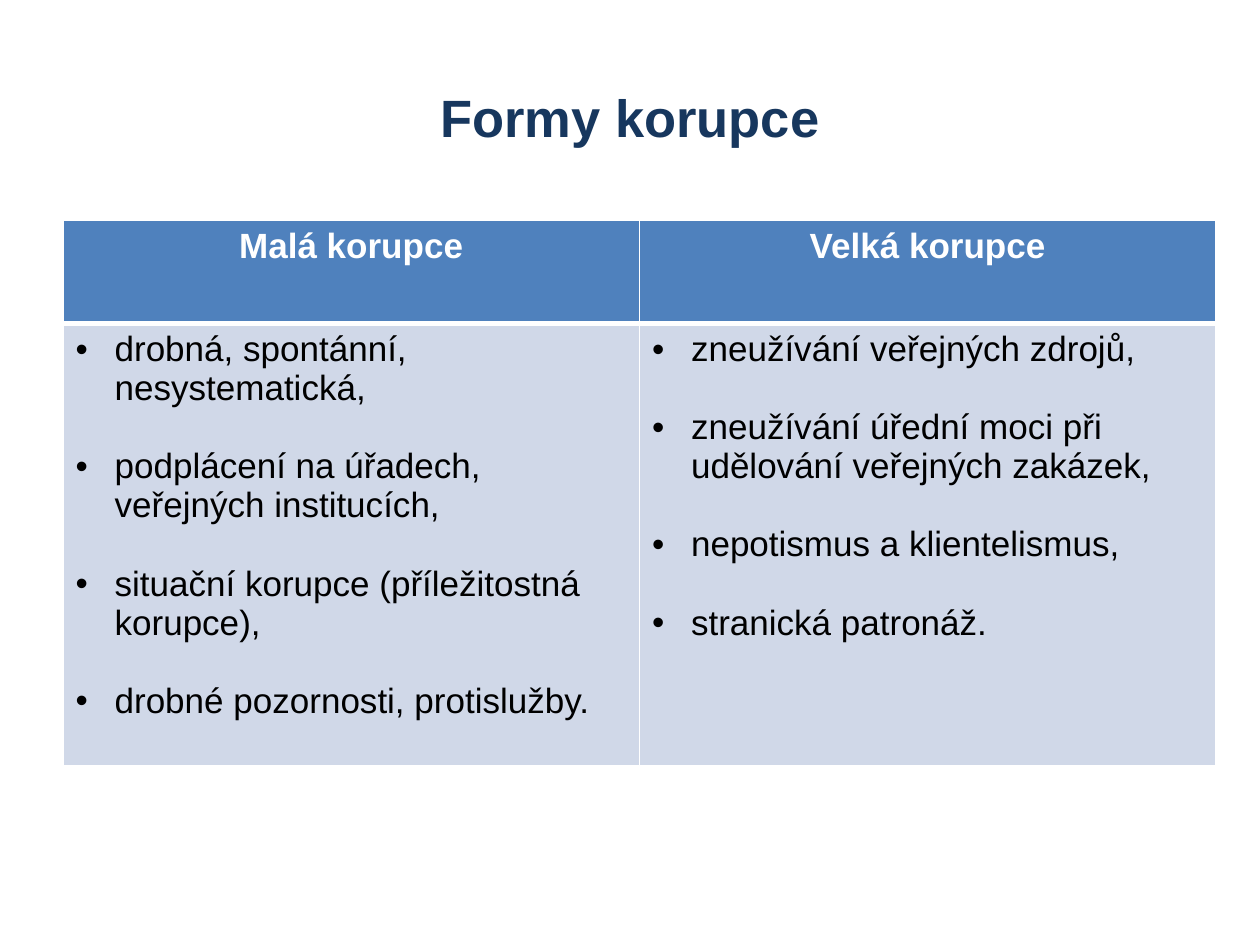
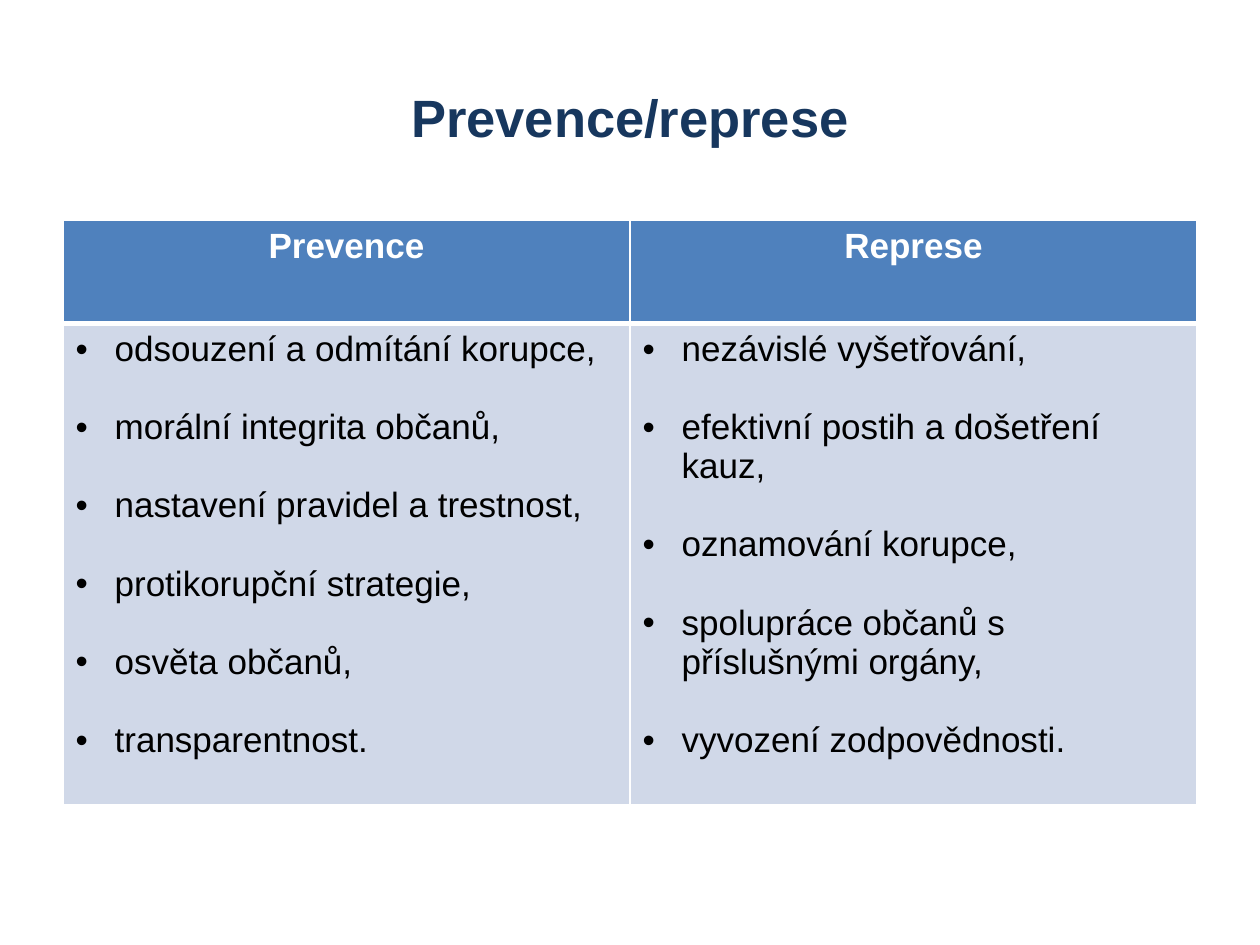
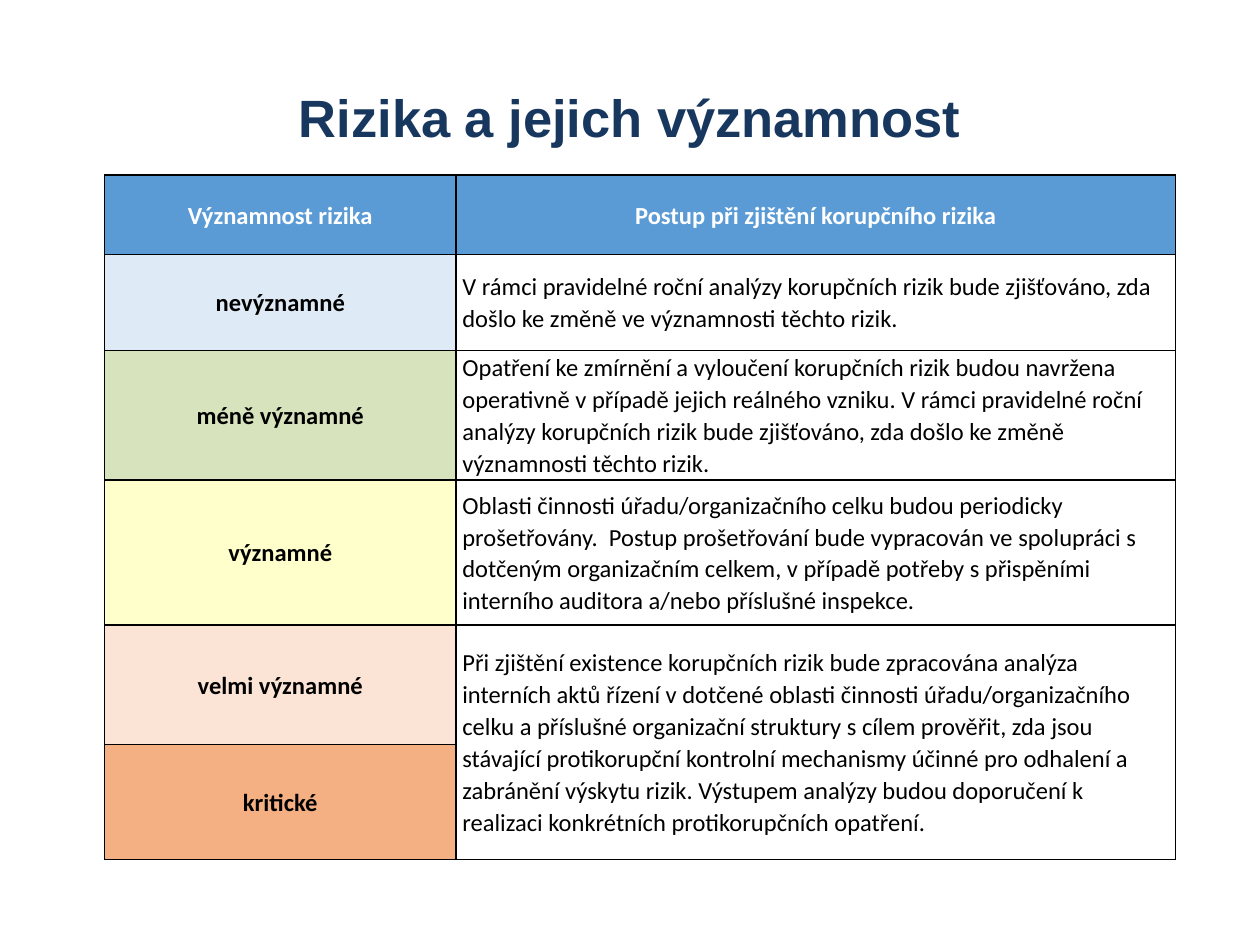
"""Build three slides on corruption: two comparison tables and a risk table."""
from lxml import etree
from pptx import Presentation
from pptx import util as u
from pptx.dml.color import RGBColor
from pptx.enum import text as t
from pptx.oxml import ns

COLOURS = {
    "title": "17375E", "header": "4F81BD", "body": "D0D8E8",
    "risk header": "5B9BD5", "white": "FFFFFF", "black": "000000",
    "nevýznamné": "DEEAF6", "méně významné": "D6E3BC",
    "významné": "FFFFCC", "velmi významné": "FBE4D5", "kritické": "F4B083",
}
COMPARISONS = [
    {
        "title": "Formy korupce", "width": 9.15, "heights": [0.82, 3.51],
        "columns": {
            "Malá korupce": [
                "drobná, spontánní, nesystematická,",
                "podplácení na úřadech, veřejných institucích,",
                "situační korupce (příležitostná korupce),",
                "drobné pozornosti, protislužby.",
            ],
            "Velká korupce": [
                "zneužívání veřejných zdrojů,",
                "zneužívání úřední moci při udělování veřejných zakázek,",
                "nepotismus a klientelismus,",
                "stranická patronáž.",
            ],
        },
    },
    {
        "title": "Prevence/represe", "width": 9, "heights": [0.82, 3.82],
        "columns": {
            "Prevence": [
                "odsouzení a odmítání korupce,",
                "morální integrita občanů,",
                "nastavení pravidel a trestnost,",
                "protikorupční strategie,",
                "osvěta občanů,",
                "transparentnost.",
            ],
            "Represe": [
                "nezávislé vyšetřování,",
                "efektivní postih a došetření kauz,",
                "oznamování korupce,",
                "spolupráce občanů s příslušnými orgány,",
                "vyvození zodpovědnosti.",
            ],
        },
    },
]
RISK_TITLE = "Rizika a jejich významnost"
RISK_HEADERS = ["Významnost rizika", "Postup při zjištění korupčního rizika"]
RISK_WIDTHS = [2.79, 5.71]
RISK_HEIGHTS = [0.63, 0.76, 1.03, 1.15, 0.95, 0.91]
RISKS = [
    ("nevýznamné", "V rámci pravidelné roční analýzy korupčních rizik bude zjišťováno, "
     "zda došlo ke změně ve významnosti těchto rizik."),
    ("méně významné", "Opatření ke zmírnění a vyloučení korupčních rizik budou navržena "
     "operativně v případě jejich reálného vzniku. V rámci pravidelné roční analýzy "
     "korupčních rizik bude zjišťováno, zda došlo ke změně významnosti těchto rizik."),
    ("významné", "Oblasti činnosti úřadu/organizačního celku budou periodicky "
     "prošetřovány.  Postup prošetřování bude vypracován ve spolupráci s dotčeným "
     "organizačním celkem, v případě potřeby s přispěními interního auditora a/nebo "
     "příslušné inspekce."),
    ("velmi významné", "Při zjištění existence korupčních rizik bude zpracována analýza "
     "interních aktů řízení v dotčené oblasti činnosti úřadu/organizačního celku a "
     "příslušné organizační struktury s cílem prověřit, zda jsou stávající protikorupční "
     "kontrolní mechanismy účinné pro odhalení a zabránění výskytu rizik. Výstupem analýzy "
     "budou doporučení k realizaci konkrétních protikorupčních opatření."),
    ("kritické", None),
]


def write(frame, lines, size=20, font="Arial", colour="black", bold=False,
          centred=False, bullets=False, spacing=None, after=0, gap=0):
    for number, line in enumerate(lines):
        para = frame.add_paragraph() if number else frame.paragraphs[0]
        para.alignment = t.PP_ALIGN.CENTER if centred else t.PP_ALIGN.LEFT
        para.space_before = u.Pt(gap if number else 0)
        para.space_after = u.Pt(after)
        if spacing:
            para.line_spacing = spacing
        if bullets:
            properties = para._p.get_or_add_pPr()
            properties.set("marL", str(u.Inches(0.31)))
            properties.set("indent", str(-u.Inches(0.31)))
            etree.SubElement(properties, ns.qn("a:buFont"), typeface="Arial")
            etree.SubElement(properties, ns.qn("a:buChar"), char="•")
        span = para.add_run()
        span.text = line
        span.font.size, span.font.name, span.font.bold = u.Pt(size), font, bold
        span.font.color.rgb = RGBColor.from_string(COLOURS[colour])


def style_cell(cell, fill=None, line="white", top=1, bottom=1):
    if fill:
        cell.fill.solid()
        cell.fill.fore_color.rgb = RGBColor.from_string(COLOURS[fill])
    else:
        cell.fill.background()
    properties = cell._tc.get_or_add_tcPr()
    for place, (side, width) in enumerate({"L": 1, "R": 1, "T": top, "B": bottom}.items()):
        border = etree.Element(ns.qn(f"a:ln{side}"), w=str(u.Pt(width)))
        solid = etree.SubElement(border, ns.qn("a:solidFill"))
        etree.SubElement(solid, ns.qn("a:srgbClr"), val=COLOURS[line])
        properties.insert(place, border)


def add_page(deck, title):
    page = deck.slides.add_slide(deck.slide_layouts[5])
    box = page.shapes.title
    box.left, box.top, box.width, box.height = map(u.Inches, (0.5, 0.3, 9, 1.25))
    box.text_frame.vertical_anchor = t.MSO_ANCHOR.MIDDLE
    write(box.text_frame, [title], size=30, colour="title", bold=True, centred=True)
    return page


def add_grid(page, left, top, widths, heights):
    grid = page.shapes.add_table(
        len(heights), len(widths), u.Inches(left), u.Inches(top),
        u.Inches(sum(widths)), u.Inches(sum(heights))).table
    grid.first_row = grid.horz_banding = False
    for column, width in zip(grid.columns, widths):
        column.width = u.Inches(width)
    for row, height in zip(grid.rows, heights):
        row.height = u.Inches(height)
    return grid


def add_comparison(deck, topic):
    page = add_page(deck, topic["title"])
    grid = add_grid(page, 0.5, 1.75, [topic["width"] / 2] * 2, topic["heights"])
    for column, (heading, points) in enumerate(topic["columns"].items()):
        head, body = grid.cell(0, column), grid.cell(1, column)
        write(head.text_frame, [heading], colour="white", bold=True, centred=True)
        write(body.text_frame, points, bullets=True, gap=22.3)
        style_cell(head, "header", bottom=3)
        style_cell(body, "body", top=3)


def add_risks(deck):
    page = add_page(deck, RISK_TITLE)
    grid = add_grid(page, 0.83, 1.39, RISK_WIDTHS, RISK_HEIGHTS)
    grid.cell(4, 1).merge(grid.cell(5, 1))
    for row, texts in enumerate([RISK_HEADERS, *RISKS]):
        for column, words in enumerate(texts):
            cell = grid.cell(row, column)
            label = row == 0 or column == 0
            fill = "risk header" if row == 0 else words if label else None
            style_cell(cell, fill, line="black")
            cell.vertical_anchor = t.MSO_ANCHOR.MIDDLE
            cell.margin_left = cell.margin_right = u.Inches(0.05)
            cell.margin_top = cell.margin_bottom = 0
            if words:
                write(cell.text_frame, [words], size=14, font="Calibri", bold=label,
                      colour="black" if row else "white", centred=label,
                      spacing=1.07, after=3 if row and label else 8)


def main():
    deck = Presentation()
    deck.slide_width, deck.slide_height = u.Inches(10), u.Inches(7.5)
    for topic in COMPARISONS:
        add_comparison(deck, topic)
    add_risks(deck)
    deck.save("out.pptx")


if __name__ == "__main__":
    main()
